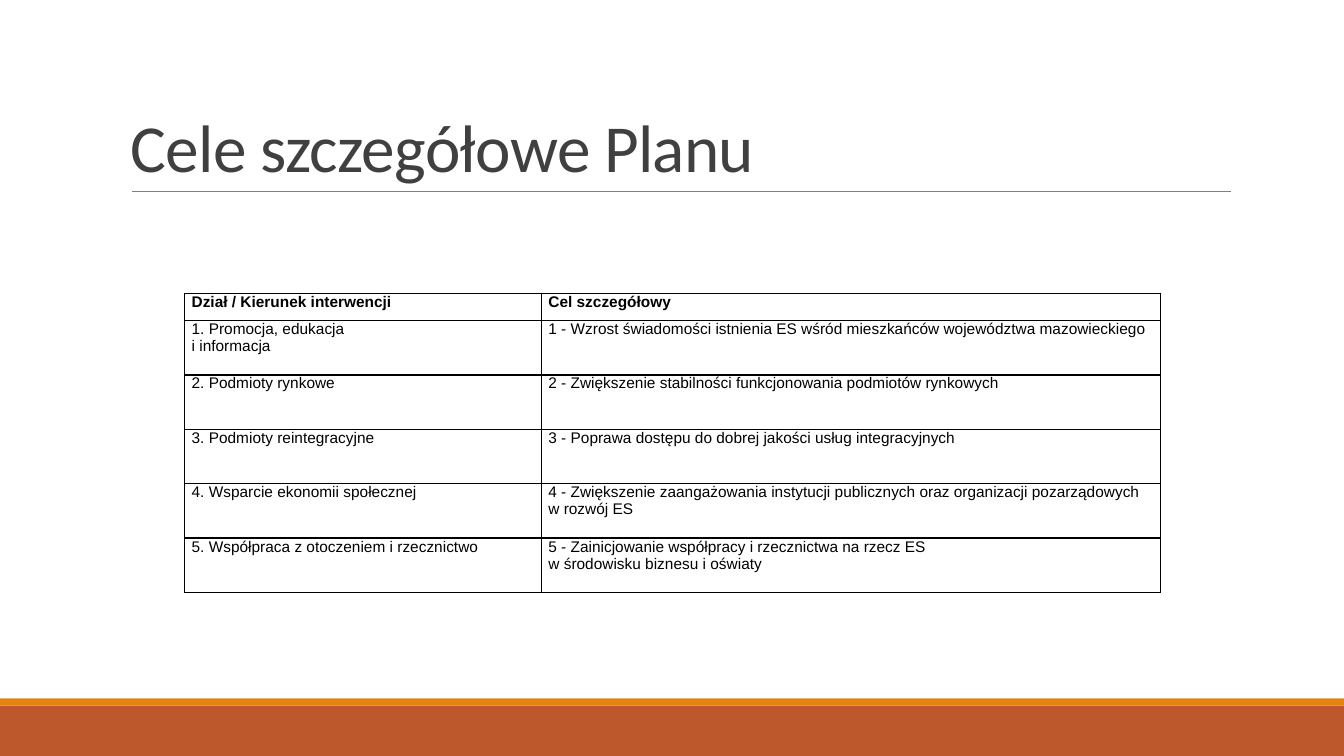
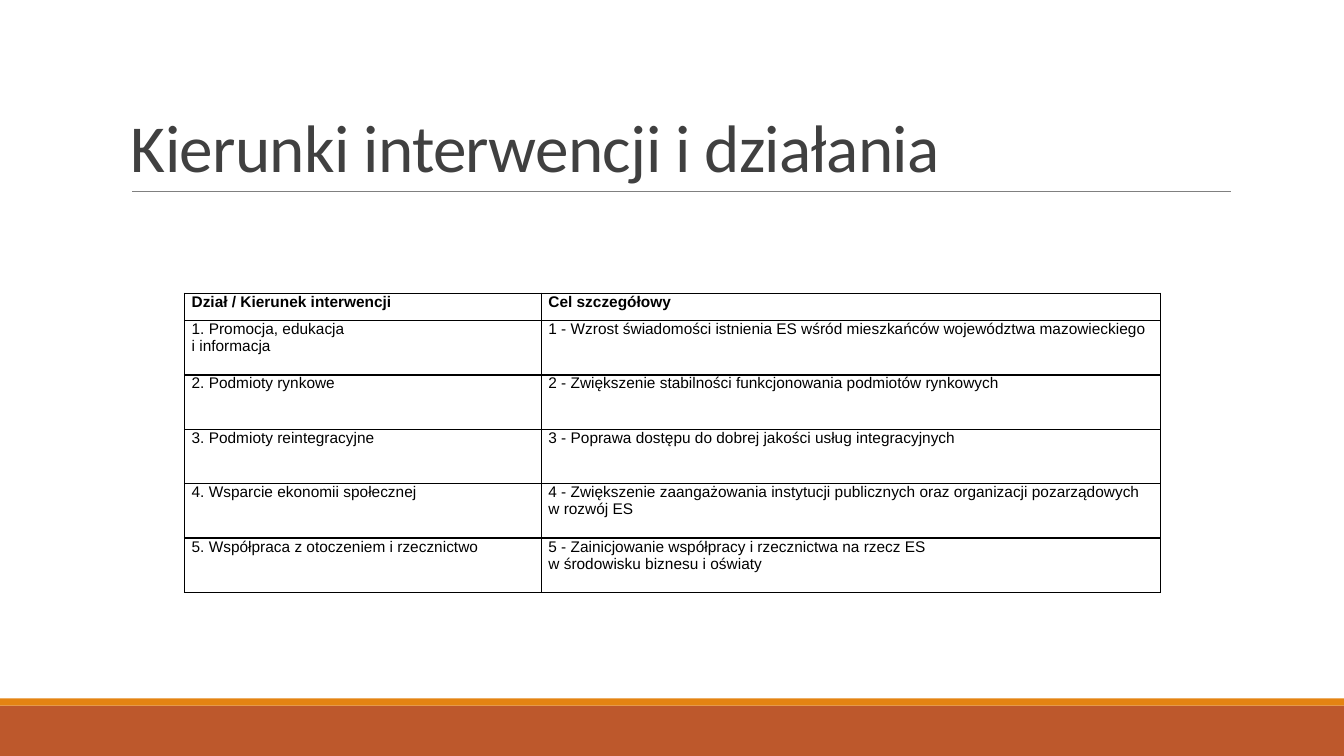
"""Builds two slides on the goals and directions of a social economy plan."""
from lxml.etree import SubElement
from pptx import Presentation
from pptx.dml.color import RGBColor
from pptx.enum.shapes import MSO_CONNECTOR, MSO_SHAPE
from pptx.enum.text import MSO_ANCHOR, PP_ALIGN
from pptx.oxml.ns import qn
from pptx.util import Cm, Pt

BLACK, TITLE_GREY, RULE_GREY = "000000", "404040", "808080"
BANDS = [(17.78, 1.27, "BD582C"), (17.6, 0.18, "E48312")]
TITLES = ["Cele szczegółowe Planu", "Kierunki interwencji i działania"]
COLUMN_WIDTHS = [8.99, 15.6]
HEADER_HEIGHT, ROW_HEIGHT = 0.69, 1.37
ROWS = [
    ("Dział / Kierunek interwencji", "Cel szczegółowy"),
    ("1. Promocja, edukacja \ni informacja",
     "1 - Wzrost świadomości istnienia ES wśród mieszkańców województwa mazowieckiego"),
    ("2. Podmioty rynkowe",
     "2 - Zwiększenie stabilności funkcjonowania podmiotów rynkowych"),
    ("3. Podmioty reintegracyjne",
     "3 - Poprawa dostępu do dobrej jakości usług integracyjnych"),
    ("4. Wsparcie ekonomii społecznej",
     "4 - Zwiększenie zaangażowania instytucji publicznych oraz organizacji pozarządowych w rozwój ES"),
    ("5. Współpraca z otoczeniem i rzecznictwo",
     "5 - Zainicjowanie współpracy i rzecznictwa na rzecz ES \nw środowisku biznesu i oświaty"),
]


def paint(color_format, color):
    color_format.rgb = RGBColor.from_string(color)


def style_text(para, name, size, color, bold=False):
    para.font.name = name
    para.font.size = Pt(size)
    para.font.bold = bold
    paint(para.font.color, color)


deck = Presentation()
deck.slide_width, deck.slide_height = Cm(33.87), Cm(19.05)

for title in TITLES:
    page = deck.slides.add_slide(deck.slide_layouts[6])

    for top, height, color in BANDS:
        band = page.shapes.add_shape(
            MSO_SHAPE.RECTANGLE, 0, Cm(top), deck.slide_width, Cm(height))
        band.shadow.inherit = False
        band.fill.solid()
        paint(band.fill.fore_color, color)
        band.line.fill.background()

    rule = page.shapes.add_connector(
        MSO_CONNECTOR.STRAIGHT, Cm(3.33), Cm(4.83), Cm(31.01), Cm(4.83))
    rule.line.width = Pt(0.5)
    paint(rule.line.color, RULE_GREY)
    SubElement(rule._element.spPr, qn("a:effectLst"))

    box = page.shapes.add_textbox(Cm(3.05), Cm(0.79), Cm(27.94), Cm(4.04))
    box.text_frame.word_wrap = True
    box.text_frame.vertical_anchor = MSO_ANCHOR.BOTTOM
    para = box.text_frame.paragraphs[0]
    para.line_spacing = 0.85
    span = para.add_run()
    span.text = title
    span._r.get_or_add_rPr().set("spc", "-50")
    style_text(para, "Calibri", 48, TITLE_GREY)

    table = page.shapes.add_table(
        len(ROWS), len(COLUMN_WIDTHS), Cm(4.65), Cm(7.39), Cm(sum(COLUMN_WIDTHS)),
        Cm(HEADER_HEIGHT + ROW_HEIGHT * (len(ROWS) - 1))).table
    table.first_row = table.horz_banding = False
    for column, width in zip(table.columns, COLUMN_WIDTHS):
        column.width = Cm(width)

    for row_index, texts in enumerate(ROWS):
        is_header = row_index == 0
        table.rows[row_index].height = Cm(HEADER_HEIGHT if is_header else ROW_HEIGHT)
        for column_index, text in enumerate(texts):
            cell = table.cell(row_index, column_index)
            cell.margin_left = cell.margin_right = Cm(0.18)
            cell.margin_top = cell.margin_bottom = 0
            properties = cell._tc.get_or_add_tcPr()
            for side in ("lnL", "lnR", "lnT", "lnB"):
                border = SubElement(properties, qn(f"a:{side}"), w=str(Pt(1)))
                fill = SubElement(border, qn("a:solidFill"))
                SubElement(fill, qn("a:srgbClr"), val=BLACK)
            cell.fill.background()
            para = cell.text_frame.paragraphs[0]
            para.text = text
            para.alignment = PP_ALIGN.JUSTIFY if is_header else PP_ALIGN.LEFT
            style_text(para, "Arial", 11, BLACK, bold=is_header)

deck.save("out.pptx")
